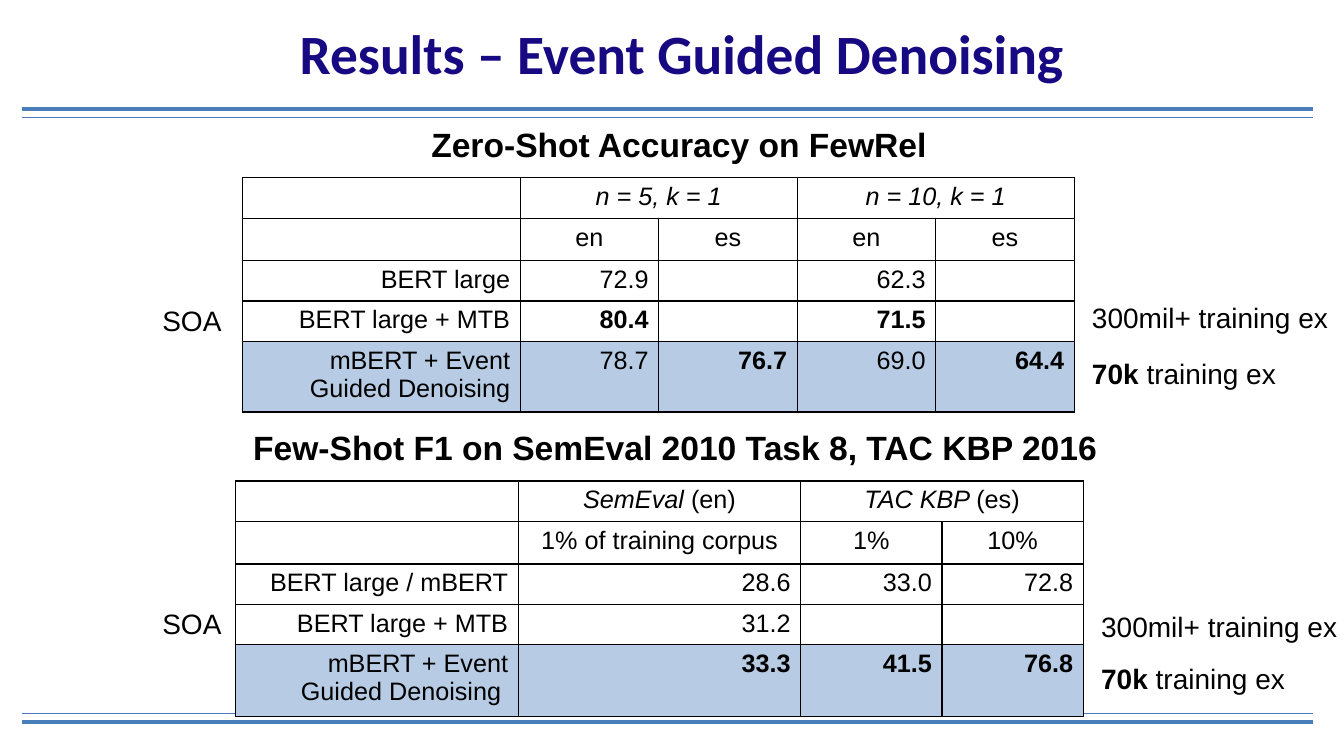
from dataclasses import dataclass

from lxml.etree import SubElement
from pptx import Presentation
from pptx.dml.color import RGBColor
from pptx.enum.shapes import MSO_CONNECTOR as Connector
from pptx.enum.text import MSO_ANCHOR as Anchor, PP_ALIGN as Align
from pptx.oxml.ns import qn
from pptx.util import Cm, Pt


@dataclass(frozen=True)
class Theme:
    title_font: str = "Calibri"
    body_font: str = "Arial"
    title_color: str = "170981"
    text_color: str = "000000"
    rule_color: str = "4A7EBB"
    highlight: str = "B7CCE4"
    title_size: float = 39.6
    heading_size: float = 24
    note_size: float = 20
    table_size: float = 18


THEME = Theme()


def bold(text):
    return text, "bold"


def italic(text):
    return text, "italic"


def write(paragraph, content, size, align, name=THEME.body_font, color=THEME.text_color):
    paragraph.alignment = align
    font = paragraph.font
    font.name, font.size = name, Pt(size)
    font.color.rgb = RGBColor.from_string(color)
    parts = content if isinstance(content, list) else [content]
    for part in parts:
        text, style = part if isinstance(part, tuple) else (part, "")
        run = paragraph.add_run()
        run.text = text
        run.font.bold = style == "bold"
        run.font.italic = style == "italic"
    if not parts:
        ending = SubElement(paragraph._p, qn("a:endParaRPr"), sz=str(size * 100))
        SubElement(ending, qn("a:latin"), typeface=name)


def add_text(slide, box, content, size, align=Align.LEFT, inset=0.13, wrap=False, **look):
    frame = slide.shapes.add_textbox(*map(Cm, box)).text_frame
    frame.word_wrap = wrap
    frame.vertical_anchor = Anchor.MIDDLE if wrap else Anchor.TOP
    frame.margin_left = frame.margin_right = Cm(inset)
    write(frame.paragraphs[0], content, size, align, **look)


def add_rules(slide, left, right, thick_top, thin_top):
    for top, weight in ((thick_top, 3), (thin_top, 0.75)):
        rule = slide.shapes.add_connector(
            Connector.STRAIGHT, Cm(left), Cm(top), Cm(right), Cm(top))
        rule.line.color.rgb = RGBColor.from_string(THEME.rule_color)
        rule.line.width = Pt(weight)
        SubElement(rule._element.spPr, qn("a:effectLst"))


def add_borders(cell):
    properties = cell._tc.get_or_add_tcPr()
    for position, side in enumerate(("lnL", "lnR", "lnT", "lnB")):
        line = properties.makeelement(qn(f"a:{side}"), {"w": str(Pt(1))})
        fill = SubElement(line, qn("a:solidFill"))
        SubElement(fill, qn("a:srgbClr"), val=THEME.text_color)
        properties.insert(position, line)


def add_results_table(slide, left, top, columns, heights, rows, spans):
    table = slide.shapes.add_table(
        len(rows), len(columns), Cm(left), Cm(top),
        Cm(sum(columns)), Cm(sum(heights))).table
    table.first_row = table.horz_banding = False
    for column, width in zip(table.columns, columns):
        column.width = Cm(width)
    for index, (row, height, contents) in enumerate(zip(table.rows, heights, rows)):
        row.height = Cm(height)
        for cell, content in zip(row.cells, contents):
            if index == len(rows) - 1:
                cell.fill.solid()
                cell.fill.fore_color.rgb = RGBColor.from_string(THEME.highlight)
            else:
                cell.fill.background()
            add_borders(cell)
            align = Align.CENTER if index < 2 else Align.RIGHT
            write(cell.text_frame.paragraphs[0], content or [], THEME.table_size, align)
    for first, last in spans:
        table.cell(0, first).merge(table.cell(0, last))


def add_panel(slide, left, top, heading, heading_left, heading_width,
              columns, heights, rows, spans, note_tops):
    add_results_table(slide, left, top, columns, heights, rows, spans)
    add_text(slide, (heading_left, top - 1.48, heading_width, 1.27),
             bold(heading), THEME.heading_size)
    add_text(slide, (3.96, top + 3.04, 1.95, 1.12), "SOA", THEME.note_size)
    notes = ("300mil+ training ex", [bold("70k"), " training ex"])
    for note, offset in zip(notes, note_tops):
        add_text(slide, (left + sum(columns) + 0.2, top + offset, 6.5, 1.12),
                 note, THEME.note_size, inset=0.25)


def build_results(slide):
    add_rules(slide, 0.56, 33.1, 2.74, 2.96)
    add_rules(slide, 0.56, 33.1, 18.2, 17.98)
    add_text(slide, (0.25, 0.33, 33.87, 2), bold("Results – Event Guided Denoising"),
             THEME.title_size, Align.CENTER, wrap=True,
             name=THEME.title_font, color=THEME.title_color)
    add_panel(
        slide, 6.12, 4.48, "Zero-Shot Accuracy on FewRel", 10.74, 12.88,
        columns=[6.99] + [3.49] * 4,
        heights=[0.97, 1.07, 1, 0.97, 1.69],
        rows=[
            ["", italic("n = 5, k = 1"), "", italic("n = 10, k = 1"), ""],
            ["", "en", "es", "en", "es"],
            ["BERT large", "72.9", "", "62.3", ""],
            ["BERT large + MTB", bold("80.4"), "", bold("71.5"), ""],
            ["mBERT + Event Guided Denoising", "78.7", bold("76.7"), "69.0", bold("64.4")],
        ],
        spans=[(1, 2), (3, 4)], note_tops=(2.97, 4.39))
    add_panel(
        slide, 5.94, 12.12, "Few-Shot F1 on SemEval 2010 Task 8, TAC KBP 2016", 6.25, 21.87,
        columns=[7.12, 7.12, 3.56, 3.56],
        heights=[1.02, 1.07, 1.02, 1.02, 1.8],
        rows=[
            ["", [italic("SemEval "), "(en)"], [italic("TAC KBP "), "(es)"], ""],
            ["", "1% of training corpus", "1%", "10%"],
            ["BERT large / mBERT", "28.6", "33.0", "72.8"],
            ["BERT large + MTB", "31.2", "", ""],
            ["mBERT + Event Guided Denoising ", bold("33.3"), bold("41.5"), bold("76.8")],
        ],
        spans=[(2, 3)], note_tops=(3.12, 4.42))


def main():
    presentation = Presentation()
    presentation.slide_width, presentation.slide_height = Cm(33.87), Cm(19.05)
    build_results(presentation.slides.add_slide(presentation.slide_layouts[6]))
    presentation.save("out.pptx")


if __name__ == "__main__":
    main()
